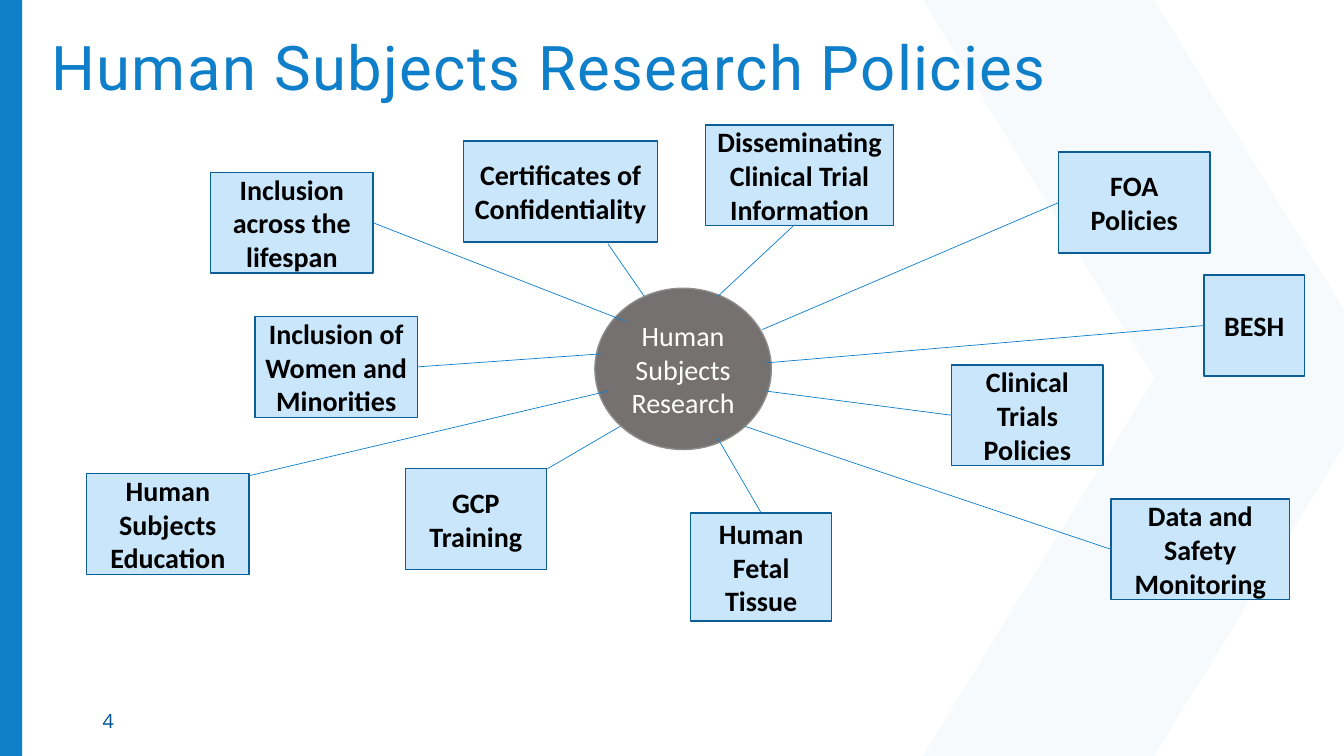
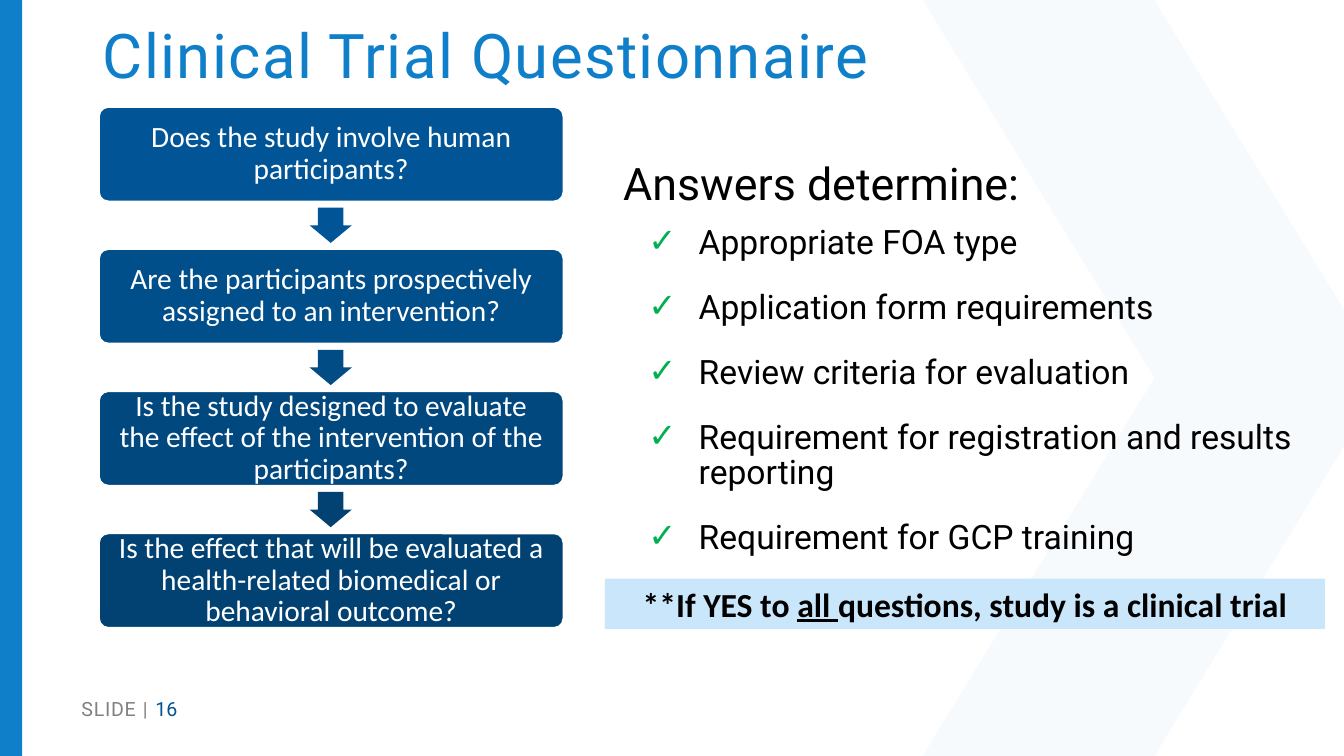
from lxml.etree import SubElement
from pptx import Presentation
from pptx.dml.color import RGBColor
from pptx.enum.shapes import MSO_CONNECTOR as CONNECTOR, MSO_SHAPE as SHAPE
from pptx.enum.text import MSO_ANCHOR as ANCHOR, MSO_AUTO_SIZE as AUTO_SIZE, PP_ALIGN as ALIGN
from pptx.oxml.ns import qn
from pptx.util import Emu, Pt

PAGE_WIDTH, PAGE_HEIGHT = 1333, 750
TITLE_ONLY, TITLE_AND_BODY = 5, 1
TOP, LEFT, RIGHT = 0, 1, 3

BLUE, NAVY, PALE, EDGE = "0F7FC9", "015396", "C9E6FB", "0B5E98"
BLACK, WHITE, GREY = "000000", "FFFFFF", "808080"

TITLE_FONT = {"name": "Roboto", "size": 44, "color": BLUE, "spacing": 100}
BOX_FONT = {"name": "Calibri", "size": 20, "color": BLACK, "bold": True}
HUB_FONT = {"name": "Calibri", "size": 20, "color": WHITE}
STEP_FONT = {"name": "Calibri", "size": 21, "color": WHITE}
HEADING_FONT = {"name": "Roboto", "size": 32, "color": BLACK}
ITEM_FONT = {"name": "Roboto", "size": 24, "color": BLACK}
NOTE_FONT = {"name": "Calibri", "size": 24, "color": BLACK, "bold": True}
NUMBER_FONT = {"name": "Open Sans", "size": 14, "color": NAVY}
FOOTER_FONT = {"name": "Roboto", "size": 14, "color": GREY}

# Label, box, start of the line (a side or a point), end of the line at the hub
POLICIES = [
    ("Human Subjects Education", (0, 346, 161, 100), (161, 348), (517, 264)),
    ("Certificates of Confidentiality", (374, 16, 192, 100), (517, 118), (553, 170)),
    ("Human Fetal Tissue", (599, 385, 140, 107), TOP, (626, 311)),
    ("Inclusion of Women and Minorities", (167, 190, 161, 100), RIGHT, (511, 227)),
    ("Inclusion across the lifespan", (123, 47, 161, 100), RIGHT, (535, 195)),
    ("Clinical Trials Policies", (858, 238, 150, 100), LEFT, (674, 264)),
    ("FOA Policies", (964, 27, 150, 100), LEFT, (670, 203)),
    ("BESH", (1108, 149, 100, 100), LEFT, (674, 236)),
    ("GCP Training", (316, 341, 140, 100), (457, 341), (529, 299)),
    ("Disseminating Clinical Trial Information", (614, 0, 186, 100), (702, 99), (626, 170)),
    ("Data and Safety Monitoring", (1016, 371, 177, 100), LEFT, (653, 299)),
]

# Question, its fill, fill of the arrow below it
QUESTIONS = [
    ("Does the study involve human participants?", "015596", "015596"),
    ("Are the participants prospectively assigned to an intervention?", "014F8A", "014C84"),
    ("Is the study designed to evaluate the effect of the intervention of the participants?",
     "01487F", "014273"),
    ("Is the effect that will be evaluated a health-related biomedical or behavioral outcome?",
     "014273", None),
]

ANSWERS = [
    "Appropriate FOA type",
    "Application form requirements",
    "Review criteria for evaluation",
    "Requirement for registration and results reporting",
    "Requirement for GCP training",
]


def px(length):
    return Emu(length * 9144)


def rgb(color):
    return RGBColor.from_string(color)


def place(shape, box):
    for name, length in zip(("left", "top", "width", "height"), box):
        setattr(shape, name, px(length))


def add_span(para, text, formats):
    span = para.add_run()
    span.text = text
    for name, value in formats.items():
        if name == "color":
            span.font.color.rgb = rgb(value)
        elif name == "spacing":
            span.font._element.set("spc", str(value))
        else:
            setattr(span.font, name, Pt(value) if name == "size" else value)


def set_text(shape, spans, align=ALIGN.LEFT, anchor=ANCHOR.MIDDLE, line_spacing=None):
    """Fill the first paragraph with (text, formats) spans."""
    frame = shape.text_frame
    frame.word_wrap = True
    frame.auto_size = AUTO_SIZE.NONE
    frame.vertical_anchor = anchor
    para = frame.paragraphs[0]
    para.alignment = align
    if line_spacing:
        para.line_spacing = line_spacing
    for text, formats in spans:
        add_span(para, text, formats)


def paint(shape, fill, line=None, line_width=1):
    shape.shadow.inherit = False
    shape.fill.solid()
    shape.fill.fore_color.rgb = rgb(fill)
    if line:
        shape.line.color.rgb = rgb(line)
        shape.line.width = Pt(line_width)
    else:
        shape.line.fill.background()


def add_box(page, kind, box, fill, line=None, line_width=1):
    shape = page.shapes.add_shape(kind, *map(px, box))
    paint(shape, fill, line, line_width)
    return shape


def move_backdrop_to_master(deck, page):
    """Draw the chevron and side band, then make them part of the master."""
    builder = page.shapes.build_freeform(915, 0, scale=px(1))
    builder.add_line_segments(
        [(1145, 0), (PAGE_WIDTH, 307), (PAGE_WIDTH, 443), (1145, PAGE_HEIGHT),
         (915, PAGE_HEIGHT), (1145, 375)], close=True)
    chevron = builder.convert_to_shape()
    paint(chevron, BLUE)
    color = next(chevron.element.spPr.iter(qn("a:srgbClr")))
    SubElement(color, qn("a:alpha")).set("val", "3000")
    band = add_box(page, SHAPE.RECTANGLE, (0, 0, 22, PAGE_HEIGHT), BLUE)
    tree = deck.slide_master.element.cSld.spTree
    for order, shape in enumerate((chevron, band)):
        shape.element.nvSpPr.cNvPr.set("id", str(101 + order))
        tree.insert(2 + order, shape.element)


def add_page(deck, layout, title, title_box, footer, footer_box):
    page = deck.slides.add_slide(deck.slide_layouts[layout])
    place(page.shapes.title, title_box)
    set_text(page.shapes.title, [(title, TITLE_FONT)], line_spacing=0.9)
    set_text(page.shapes.add_textbox(*map(px, footer_box)), footer)
    return page


def add_policy_map(page, left, top):
    def shift(point):
        return left + point[0], top + point[1]

    hub = add_box(page, SHAPE.FLOWCHART_CONNECTOR, (*shift((504, 162)), 175, 160),
                  "767171", "8D8D8D")
    set_text(hub, [("Human Subjects Research", HUB_FONT)], ALIGN.CENTER)
    for label, box, start, end in POLICIES:
        policy = add_box(page, SHAPE.RECTANGLE, (*shift(box), *box[2:]), PALE, EDGE)
        set_text(policy, [(label, BOX_FONT)], ALIGN.CENTER)
        joined = isinstance(start, int)
        ends = shift(end if joined else start) + shift(end)
        spoke = page.shapes.add_connector(CONNECTOR.STRAIGHT, *map(px, ends))
        if joined:
            spoke.begin_connect(policy, start)
        spoke.line.color.rgb = rgb("0F7FCD")
        spoke.line.width = Pt(0.5)
        SubElement(spoke.element.spPr, qn("a:effectLst"))


def add_question_flow(page, left, top, width):
    height, pitch, arrow_width, arrow_height = 94, 141, 42, 35
    for index, (question, fill, arrow_fill) in enumerate(QUESTIONS):
        step_top = top + index * pitch
        step = add_box(page, SHAPE.ROUNDED_RECTANGLE, (left, step_top, width, height),
                       fill, WHITE, 1.5)
        step.adjustments[0] = 0.1
        for side in ("left", "top", "right", "bottom"):
            setattr(step.text_frame, f"margin_{side}", px(11))
        set_text(step, [(question, STEP_FONT)], ALIGN.CENTER, line_spacing=0.9)
        if arrow_fill:
            arrow_left = left + (width - arrow_width) // 2
            arrow = add_box(page, SHAPE.DOWN_ARROW,
                            (arrow_left, step_top + 100, arrow_width, arrow_height), arrow_fill)
            arrow.adjustments[0], arrow.adjustments[1] = 0.6, 0.5


def set_bullet(para, margin, indent, char=None, color=None):
    properties = para._p.get_or_add_pPr()
    properties.set("marL", str(px(margin)))
    properties.set("indent", str(px(indent)))
    if char:
        bullet_color = SubElement(properties, qn("a:buClr"))
        SubElement(bullet_color, qn("a:srgbClr")).set("val", color)
        SubElement(properties, qn("a:buChar")).set("char", char)
    else:
        SubElement(properties, qn("a:buNone"))


def add_answers(body, box):
    place(body, box)
    frame = body.text_frame
    heading = frame.paragraphs[0]
    set_bullet(heading, 0, 0)
    set_text(body, [("Answers determine:", HEADING_FONT)], anchor=ANCHOR.TOP, line_spacing=1.08)
    heading.space_before = Pt(0)
    for index, answer in enumerate(ANSWERS):
        para = frame.add_paragraph()
        set_bullet(para, 75, -50, "✓", "00B050")
        formats = {"level": 1, "line_spacing": 0.88,
                   "space_before": Pt(9 if index else 12), "space_after": Pt(12)}
        for name, value in formats.items():
            setattr(para, name, value)
        add_span(para, answer, ITEM_FONT)


def add_conclusion(page, box):
    note = add_box(page, SHAPE.RECTANGLE, box, PALE)
    spans = [("**If YES to ", NOTE_FONT), ("all ", {**NOTE_FONT, "underline": True}),
             ("questions, study is a clinical trial", NOTE_FONT)]
    set_text(note, spans, ALIGN.CENTER, ANCHOR.TOP)


def build_policies(deck):
    page = add_page(deck, TITLE_ONLY, "Human Subjects Research Policies", (41, 28, 1059, 84),
                    [("4", NUMBER_FONT)], (92, 695, 300, 40))
    move_backdrop_to_master(deck, page)
    add_policy_map(page, 86, 124)


def build_questionnaire(deck):
    footer = [("SLIDE", {**FOOTER_FONT, "spacing": 50}),
              (" | ", {**FOOTER_FONT, "spacing": 100}),
              ("16", {**FOOTER_FONT, "color": NAVY})]
    page = add_page(deck, TITLE_AND_BODY, "Clinical Trial Questionnaire", (92, 14, 1033, 88),
                    footer, (71, 683, 300, 40))
    add_answers(page.placeholders[1], (608, 145, 698, 477))
    add_question_flow(page, 98, 106, 461)
    add_conclusion(page, (600, 574, 714, 50))


def main():
    deck = Presentation()
    deck.slide_width, deck.slide_height = px(PAGE_WIDTH), px(PAGE_HEIGHT)
    build_policies(deck)
    build_questionnaire(deck)
    deck.save("out.pptx")


if __name__ == "__main__":
    main()
